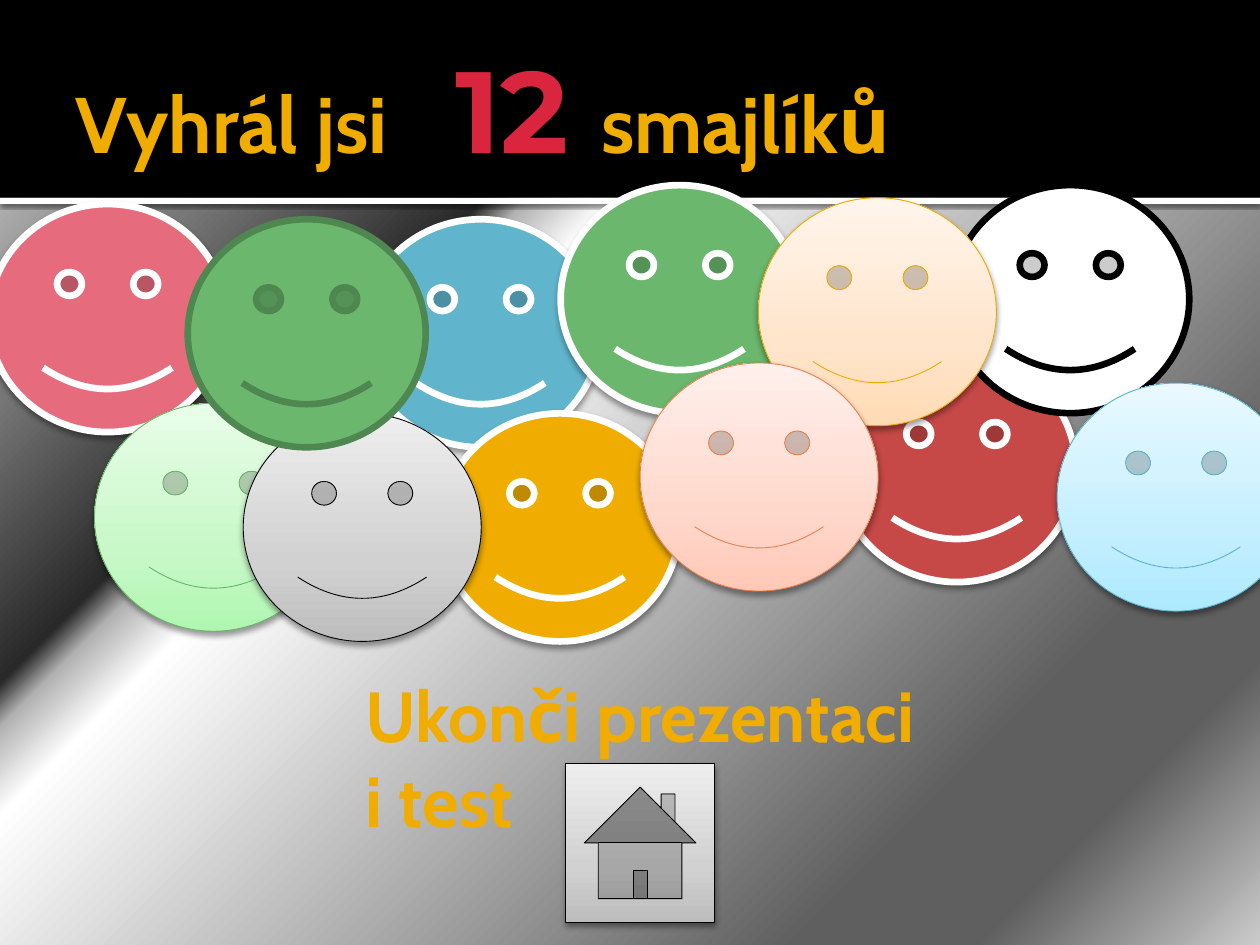
import pptx
import pptx.util
import pptx.dml.color
import pptx.enum.shapes
import pptx.enum.text
import pptx.oxml
import pptx.oxml.ns
from dataclasses import dataclass

Pt = pptx.util.Pt
Kind = pptx.enum.shapes.MSO_SHAPE
NS = pptx.oxml.ns.nsdecls("a")
qn = pptx.oxml.ns.qn


@dataclass(frozen=True)
class Theme:
    font: str = "Cabin"
    bold_font: str = "Montserrat"
    title: float = 45
    score: float = 66
    note: float = 40.5
    gold: str = "F0AD00"
    red: str = "D9253E"
    white: str = "FFFFFF"
    black: str = "000000"
    pink: str = "E66C7D"
    blue: str = "60B5CC"
    green: str = "6BB76D"
    moss: str = "4F8751"
    brick: str = "C64847"
    # Soft fills: stops from bottom to top
    mint: tuple = ((0, "B0F6B1"), (35, "C8F8C8"), (100, "E9FDE9"))
    peach: tuple = ((0, "FFDBB5"), (35, "FFE5CB"), (100, "FFF5EB"))
    sky: tuple = ((0, "ADE9FF"), (35, "C5EFFF"), (100, "E9F9FF"))
    rose: tuple = ((0, "FFC8B7"), (35, "FFD8CC"), (100, "FFF0EC"))
    gray: tuple = ((0, "BDBDBD"), (35, "D1D1D1"), (100, "EEEEEE"))
    metal: tuple = ((0, "CBCBCB"), (13, "5F5F5F"), (21, "5F5F5F"),
                    (63, "FFFFFF"), (67, "B2B2B2"), (69, "292929"),
                    (82, "777777"), (100, "EAEAEA"))
    mint_edge: str = "67B569"
    peach_edge: str = "EBA900"
    sky_edge: str = "5BB3CA"
    rose_edge: str = "E7824C"


T = Theme()
SOFT = (38, 3.5, 2)     # shadow: opacity, blur, distance
CRISP = (60, 2.5, 0.8)
UP = '<a:lin ang="16200000" scaled="0"/>'
ROUND = ('<a:path path="circle">'
         '<a:fillToRect l="100000" t="100000" r="0" b="0"/></a:path>')


def rgb(code):
    return pptx.dml.color.RGBColor.from_string(code)


def blend(fill, root, stops, course):
    """Give a fill its gradient stops and its course."""
    fill.gradient()
    node = root.find(".//" + qn("a:gradFill"))
    for child in list(node):
        node.remove(child)
    marks = "".join(f'<a:gs pos="{pos * 1000}"><a:srgbClr val="{code}"/></a:gs>'
                    for pos, code in stops)
    node.append(pptx.oxml.parse_xml(f"<a:gsLst {NS}>{marks}</a:gsLst>"))
    node.append(pptx.oxml.parse_xml(course.replace(" ", f" {NS} ", 1)))


def shade(shape, alpha, blur, dist):
    """Cast a shadow straight down."""
    shape._element.spPr.find(qn("a:effectLst")).append(pptx.oxml.parse_xml(
        f'<a:outerShdw {NS} blurRad="{Pt(blur)}" dist="{Pt(dist)}" '
        f'dir="5400000" rotWithShape="0"><a:srgbClr val="{T.black}">'
        f'<a:alpha val="{alpha * 1000}"/></a:srgbClr></a:outerShdw>'))


def draw(slide, kind, box, fill, edge=None, width=0.5, shadow=None):
    shape = slide.shapes.add_shape(kind, *map(Pt, box))
    shape.shadow.inherit = False
    if isinstance(fill, str):
        shape.fill.solid()
        shape.fill.fore_color.rgb = rgb(fill)
    else:
        blend(shape.fill, shape._element.spPr, fill, UP)
    if edge:
        shape.line.color.rgb = rgb(edge)
        shape.line.width = Pt(width)
    else:
        shape.line.fill.background()
    if shadow:
        shade(shape, *shadow)


def face(slide, left, top, fill, edge, width=0.5, shadow=SOFT):
    draw(slide, Kind.SMILEY_FACE, (left, top, 136, 130.3),
         fill, edge, width, shadow)


def frame(slide, *box):
    """Add a text box and return its paragraph."""
    body = slide.shapes.add_textbox(*map(Pt, box)).text_frame
    body.word_wrap = True
    body.vertical_anchor = pptx.enum.text.MSO_ANCHOR.MIDDLE
    body.margin_left = Pt(7.2)
    body.margin_right = body.margin_top = body.margin_bottom = Pt(3.6)
    return body.paragraphs[0]


def write(par, text, size=T.title, font=T.font, color=T.gold):
    run = par.add_run()
    run.text = text
    run.font.size = Pt(size)
    run.font.name = font
    run.font.bold = True
    run.font.color.rgb = rgb(color)


def main():
    deck = pptx.Presentation()
    deck.slide_width, deck.slide_height = Pt(720), Pt(540)
    slide = deck.slides.add_slide(deck.slide_layouts[6])
    blend(slide.background.fill, slide._element, T.metal, ROUND)

    # Header band and title
    draw(slide, Kind.RECTANGLE, (0, 113, 720, 3.6), T.white, shadow=CRISP)
    draw(slide, Kind.RECTANGLE, (0, 0, 720, 113), T.black)
    head = frame(slide, 36, 12.2, 648, 98.6)
    head._p.get_or_add_pPr().append(pptx.oxml.parse_xml(
        f'<a:tabLst {NS}><a:tab pos="{Pt(217)}" algn="l"/></a:tabLst>'))
    write(head, "Vyhrál jsi\t")
    write(head, "12 ", size=T.score, font=T.bold_font, color=T.red)
    write(head, "smajlíků")

    # Plain faces with a white rim
    for left, top, fill in ((206.6, 125.3, T.blue), (-6.5, 116.6, T.pink),
                            (320.4, 105.8, T.green), (252, 236.2, T.gold),
                            (478.8, 202.3, T.brick)):
        face(slide, left, top, fill, T.white, 3.82)
    face(slide, 543.6, 105.8, T.white, T.black, 3.78, None)

    # Soft faces with a thin rim
    for left, top, fill, edge in ((54, 230.4, T.mint, T.mint_edge),
                                  (433.4, 113, T.peach, T.peach_edge),
                                  (604.1, 218.9, T.sky, T.sky_edge),
                                  (365.8, 207.4, T.rose, T.rose_edge),
                                  (139, 236.2, T.gray, T.black)):
        face(slide, left, top, fill, edge)
    face(slide, 107.3, 125.3, T.green, T.moss, 3.78, None)

    # Home button and closing note
    draw(slide, Kind.ACTION_BUTTON_HOME, (323.3, 436.3, 85, 90.7),
         T.gray, T.black, shadow=SOFT)
    note = frame(slide, 201.6, 383, 345.6, 98.6)
    write(note, "Ukonči prezentaci", size=T.note)
    note.add_line_break()
    write(note, "i test", size=T.note)

    deck.save("out.pptx")


if __name__ == "__main__":
    main()
